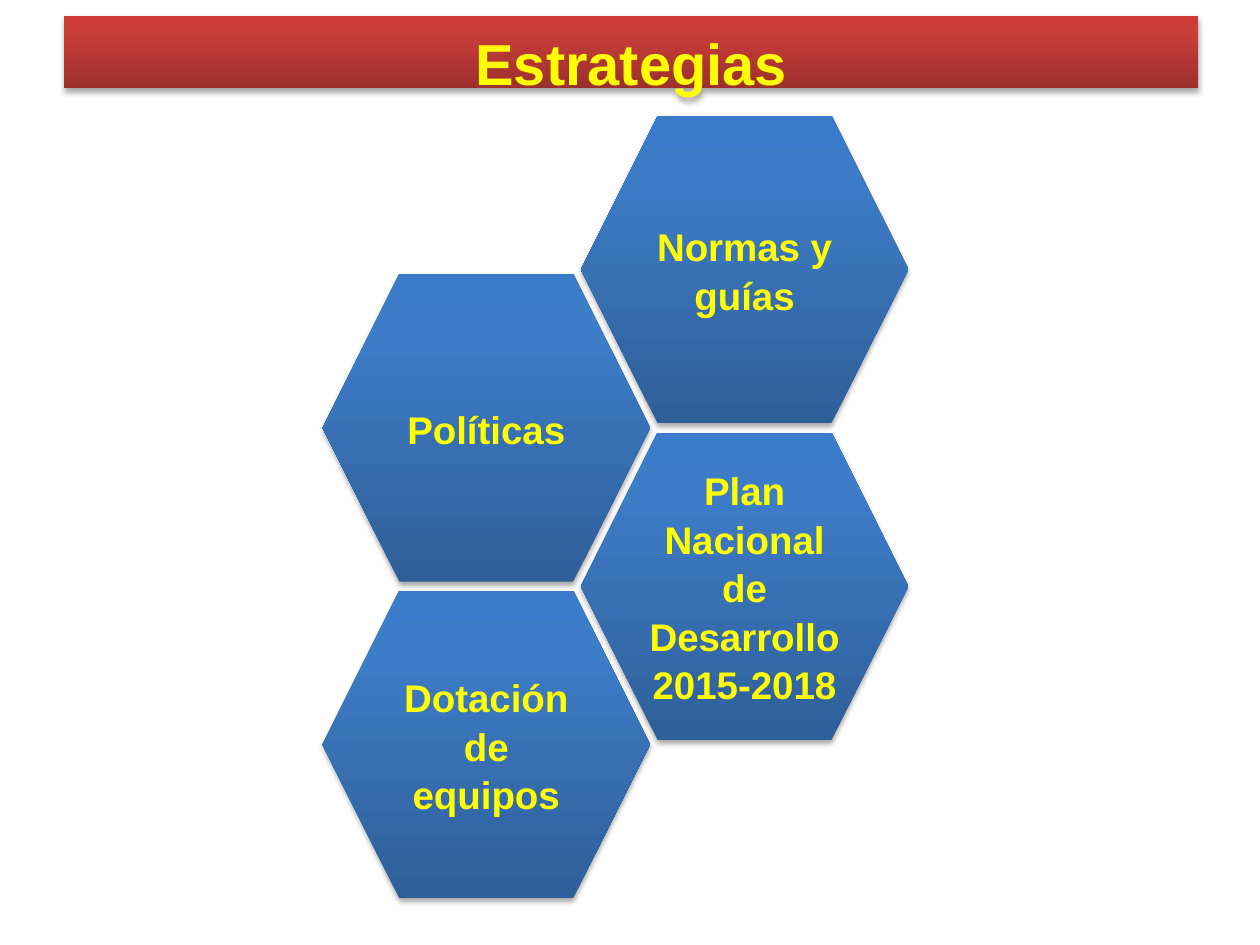
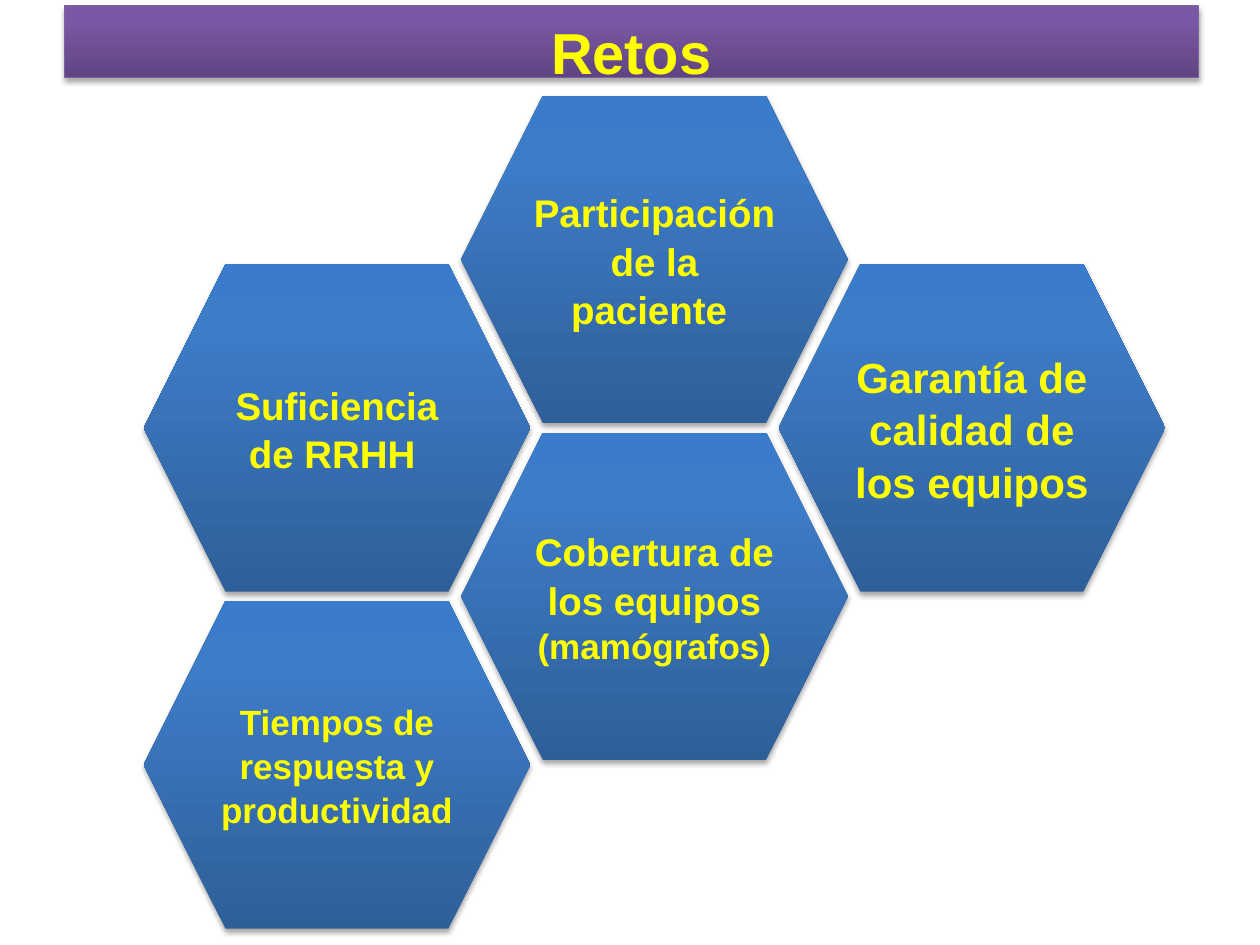
import copy

import pptx
import pptx.util
import pptx.dml.color
import pptx.enum.shapes
import pptx.enum.text
import pptx.oxml
import pptx.oxml.ns

Pt = pptx.util.Pt
RGB = pptx.dml.color.RGBColor.from_string
ANCHOR = pptx.enum.text.MSO_ANCHOR

SLIDES = [
    {
        "title": "Estrategias", "band": "red", "band_top": 9.4, "outline": None,
        "origin": (184.3, 66.2), "cell": (187.2, 175.7), "column_step": 147.6,
        "cells": [
            (0, 1, [("Políticas", "normal")]),
            (1, 0, [("Normas y guías", "normal")]),
            (0, 3, [("Dotación de equipos", "normal")]),
            (1, 2, [("Plan Nacional de Desarrollo 2015-2018", "normal")]),
        ],
    },
    {
        "title": "Retos", "band": "purple", "band_top": 3.4, "outline": "7D60A0",
        "origin": (82.1, 54.7), "cell": (221, 187.2), "column_step": 181.4,
        "cells": [
            (1, 0, [("Participación de la paciente ", "normal")]),
            (1, 2, [("Cobertura de los equipos ", "normal"), ("(mamógrafos) ", "small")]),
            (0, 1, [("Suficiencia de RRHH", "normal"), (" ", "small")]),
            (0, 3, [("Tiempos de respuesta y productividad", "small")]),
            (2, 1, [("Garantía de calidad de los equipos", "large")]),
        ],
    },
]

THEME = {
    "font": "Arial",
    "text": "FFFF00",
    "sizes": {"title": 33, "large": 24, "normal": 22, "small": 20},
    "gradients": {
        "red": [(0, "9C2F2D"), (0.8, "CB3E3A"), (1, "CE3B37")],
        "purple": [(0, "5F4480"), (0.8, "7B58A6"), (1, "7C57A8")],
        "blue": [(0, "2F5F99"), (0.8, "3D7CC7"), (1, "3A7CCB")],
    },
}

BAND_LEFT, BAND_WIDTH, BAND_HEIGHT = 36.7, 648, 41
ROW_GAP = 5.3
LINE_SPACING = 1.05

BAND_FRAME = {"vertical_anchor": ANCHOR.TOP, "margin_top": Pt(4.4)}
CELL_FRAME = {"vertical_anchor": ANCHOR.MIDDLE, "margin_left": Pt(7), "margin_right": Pt(7)}
SHARED_FRAME = {"word_wrap": True, "auto_size": pptx.enum.text.MSO_AUTO_SIZE.NONE}

SHADOW = (
    f'<a:outerShdw {pptx.oxml.ns.nsdecls("a")} blurRad="{Pt(3.1)}" dist="{Pt(1.8)}" '
    'dir="5400000" rotWithShape="0"><a:srgbClr val="000000">'
    '<a:alpha val="35000"/></a:srgbClr></a:outerShdw>'
)


def set_attributes(target, values):
    for name, value in values.items():
        setattr(target, name, value)


def paint(shape, gradient, outline=None):
    shape.fill.gradient()
    shape.fill.gradient_angle = 90
    stop_list = shape.element.spPr.find(".//" + pptx.oxml.ns.qn("a:gsLst"))
    stop_list.append(copy.deepcopy(stop_list[-1]))
    for stop, (position, color) in zip(shape.fill.gradient_stops, THEME["gradients"][gradient]):
        stop.position = position
        stop.color.rgb = RGB(color)
    if outline:
        shape.line.color.rgb = RGB(outline)
        shape.line.width = Pt(0.75)
    else:
        shape.line.fill.background()
    shape.shadow.inherit = False
    effects = shape.element.spPr.find(pptx.oxml.ns.qn("a:effectLst"))
    effects.append(pptx.oxml.parse_xml(SHADOW))


def write(shape, pieces, frame_format):
    set_attributes(shape.text_frame, {**SHARED_FRAME, **frame_format})
    paragraph = shape.text_frame.paragraphs[0]
    set_attributes(paragraph, {
        "alignment": pptx.enum.text.PP_ALIGN.CENTER,
        "line_spacing": LINE_SPACING,
    })
    for text, size in pieces:
        run = paragraph.add_run()
        run.text = text
        set_attributes(run.font, {
            "name": THEME["font"], "size": Pt(THEME["sizes"][size]), "bold": True,
        })
        run.font.color.rgb = RGB(THEME["text"])


def add_band(slide, content):
    band = slide.shapes.title
    set_attributes(band, {
        "left": Pt(BAND_LEFT), "top": Pt(content["band_top"]),
        "width": Pt(BAND_WIDTH), "height": Pt(BAND_HEIGHT),
    })
    paint(band, content["band"], content["outline"])
    write(band, [(content["title"], "title")], BAND_FRAME)


def add_honeycomb(slide, content):
    left, top = content["origin"]
    width, height = content["cell"]
    half_row = (height + ROW_GAP) / 2
    for column, row, pieces in content["cells"]:
        hexagon = slide.shapes.add_shape(
            pptx.enum.shapes.MSO_SHAPE.HEXAGON,
            Pt(left + column * content["column_step"]), Pt(top + row * half_row),
            Pt(width), Pt(height),
        )
        paint(hexagon, "blue")
        write(hexagon, pieces, CELL_FRAME)


def main():
    deck = pptx.Presentation()
    deck.slide_width, deck.slide_height = Pt(720), Pt(540)
    for content in SLIDES:
        slide = deck.slides.add_slide(deck.slide_layouts[5])
        add_band(slide, content)
        add_honeycomb(slide, content)
    deck.save("out.pptx")


if __name__ == "__main__":
    main()
